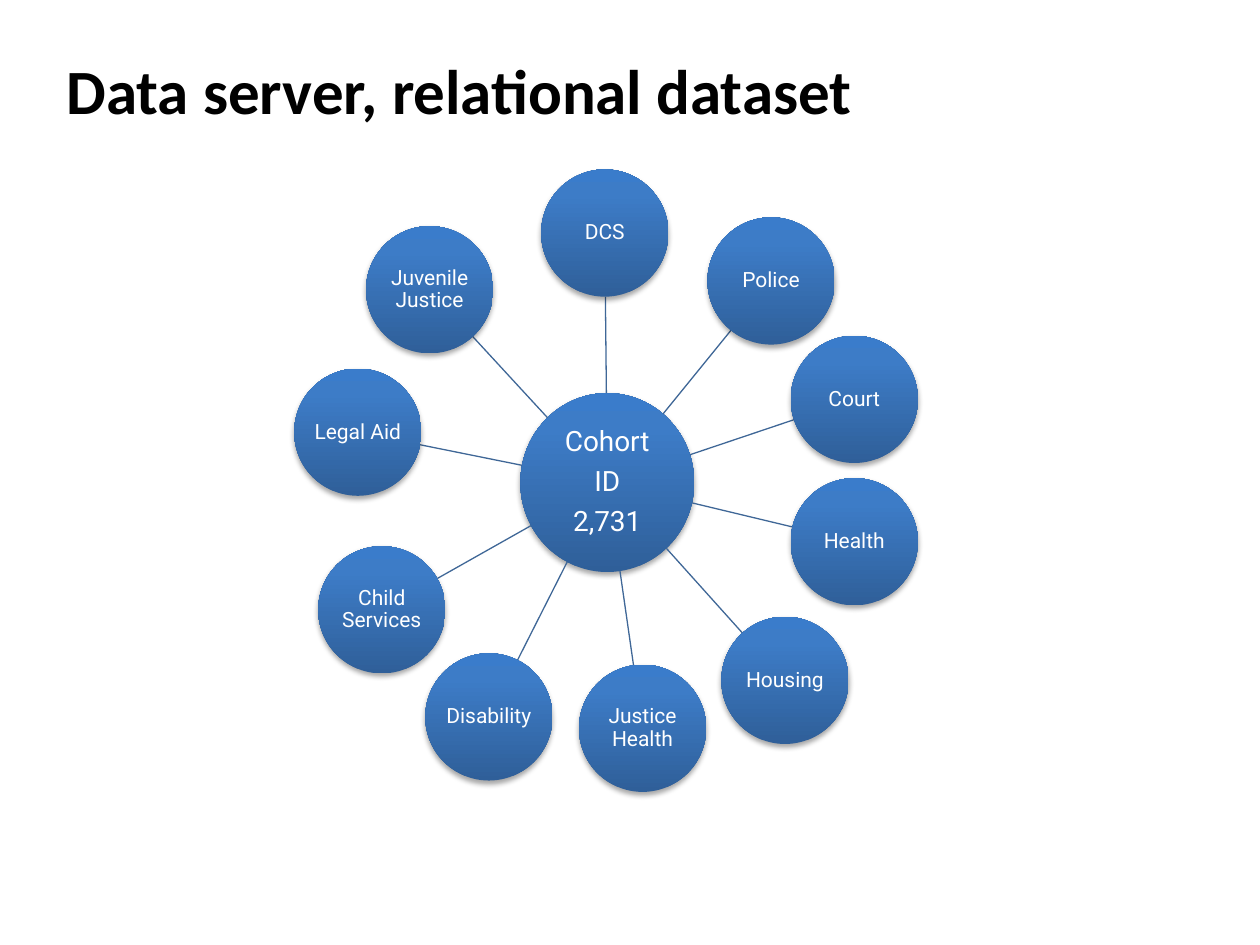
from math import hypot
from typing import NamedTuple

from lxml.etree import SubElement
from pptx import Presentation
from pptx.dml.color import RGBColor
from pptx.enum.shapes import MSO_CONNECTOR, MSO_SHAPE
from pptx.enum.text import MSO_ANCHOR, PP_ALIGN
from pptx.oxml.ns import qn
from pptx.util import Inches, Pt

BLACK = RGBColor(0x00, 0x00, 0x00)
WHITE = RGBColor(0xFF, 0xFF, 0xFF)
SPOKE_BLUE = RGBColor(0x3F, 0x67, 0x97)
GRADIENT_STOPS = (
    (0, RGBColor(0x2F, 0x5F, 0x99)),
    (80, RGBColor(0x3D, 0x7C, 0xC7)),
    (100, RGBColor(0x3A, 0x7C, 0xCB)),
)


class Node(NamedTuple):
    lines: tuple[str, ...]
    center_x: float
    center_y: float
    width: float = 1.01
    height: float = 1.01
    font_size: int = 12


COHORT = Node(("Cohort", "ID", "2,731"), 4.82, 3.83, 1.38, 1.42, 16)
AGENCIES = (
    Node(("DCS",), 4.8, 1.85),
    Node(("Police",), 6.12, 2.23),
    Node(("Court",), 6.78, 3.17),
    Node(("Housing",), 6.23, 5.4),
    Node(("Justice Health",), 5.1, 5.78),
    Node(("Child Services",), 3.03, 4.84),
    Node(("Health",), 6.78, 4.3),
    Node(("Disability",), 3.88, 5.69),
    Node(("Legal Aid",), 2.84, 3.43),
    Node(("Juvenile Justice",), 3.41, 2.3),
)


def apply_gradient(shape) -> None:
    shape.fill.gradient()
    shape.fill.gradient_angle = 90
    stop_list = shape.element.spPr.find(".//" + qn("a:gsLst"))
    for stop in list(stop_list):
        stop_list.remove(stop)
    for percent, color in GRADIENT_STOPS:
        stop = SubElement(stop_list, qn("a:gs"), pos=str(percent * 1000))
        SubElement(stop, qn("a:srgbClr"), val=str(color))


def apply_shadow(shape) -> None:
    shape.shadow.inherit = False
    effects = shape.element.spPr.find(qn("a:effectLst"))
    shadow = SubElement(
        effects, qn("a:outerShdw"), blurRad=str(Pt(3.1)), dist=str(Pt(1.8)),
        dir="5400000", rotWithShape="0",
    )
    color = SubElement(shadow, qn("a:srgbClr"), val=str(BLACK))
    SubElement(color, qn("a:alpha"), val="35000")


def add_node(slide, node: Node) -> None:
    shape = slide.shapes.add_shape(
        MSO_SHAPE.OVAL,
        Inches(node.center_x - node.width / 2), Inches(node.center_y - node.height / 2),
        Inches(node.width), Inches(node.height),
    )
    apply_gradient(shape)
    shape.line.fill.background()
    apply_shadow(shape)

    frame = shape.text_frame
    frame.word_wrap = True
    frame.vertical_anchor = MSO_ANCHOR.MIDDLE
    frame.margin_left = frame.margin_right = Inches(0.01)
    frame.margin_top = frame.margin_bottom = Inches(0.01)
    frame.text = "\n".join(node.lines)
    for index, paragraph in enumerate(frame.paragraphs):
        paragraph.alignment = PP_ALIGN.CENTER
        paragraph.line_spacing = 0.9
        if index:
            paragraph.space_before = Pt(5.6)
        paragraph.font.name = "Roboto"
        paragraph.font.size = Pt(node.font_size)
        paragraph.font.color.rgb = WHITE


def edge_point(node: Node, target: Node) -> tuple[float, float]:
    """Return where the line towards the target leaves the node's ellipse."""
    run = target.center_x - node.center_x
    rise = target.center_y - node.center_y
    scale = 1 / hypot(run / (node.width / 2), rise / (node.height / 2))
    return node.center_x + run * scale, node.center_y + rise * scale


def add_spoke(slide, hub: Node, agency: Node) -> None:
    start = edge_point(hub, agency)
    end = edge_point(agency, hub)
    spoke = slide.shapes.add_connector(
        MSO_CONNECTOR.STRAIGHT, *(Inches(value) for value in start + end)
    )
    spoke.line.color.rgb = SPOKE_BLUE
    spoke.line.width = Pt(0.75)
    SubElement(spoke.element.spPr, qn("a:effectLst"))


def add_title(slide, text: str) -> None:
    box = slide.shapes.add_textbox(Inches(0.43), Inches(0.36), Inches(9), Inches(0.87))
    frame = box.text_frame
    frame.word_wrap = True
    frame.vertical_anchor = MSO_ANCHOR.TOP
    frame.text = text
    font = frame.paragraphs[0].font
    font.name = "Calibri"
    font.size = Pt(36)
    font.bold = True
    font.color.rgb = BLACK


def main() -> None:
    presentation = Presentation()
    presentation.slide_width = Inches(10)
    presentation.slide_height = Inches(7.5)
    slide = presentation.slides.add_slide(presentation.slide_layouts[6])

    add_title(slide, "Data server, relational dataset")
    add_node(slide, COHORT)
    for agency in AGENCIES:
        add_spoke(slide, COHORT, agency)
        add_node(slide, agency)

    presentation.save("out.pptx")


if __name__ == "__main__":
    main()
